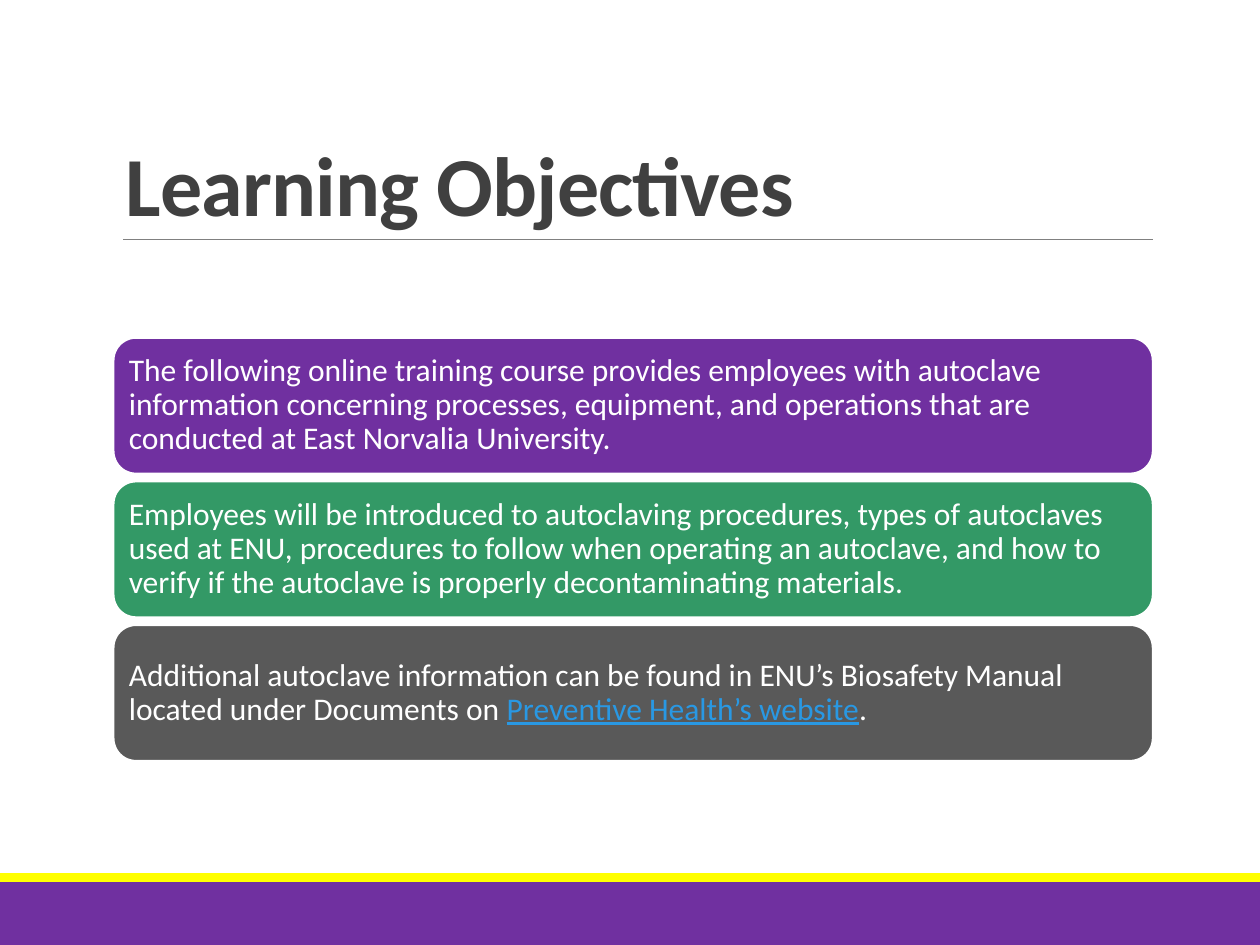
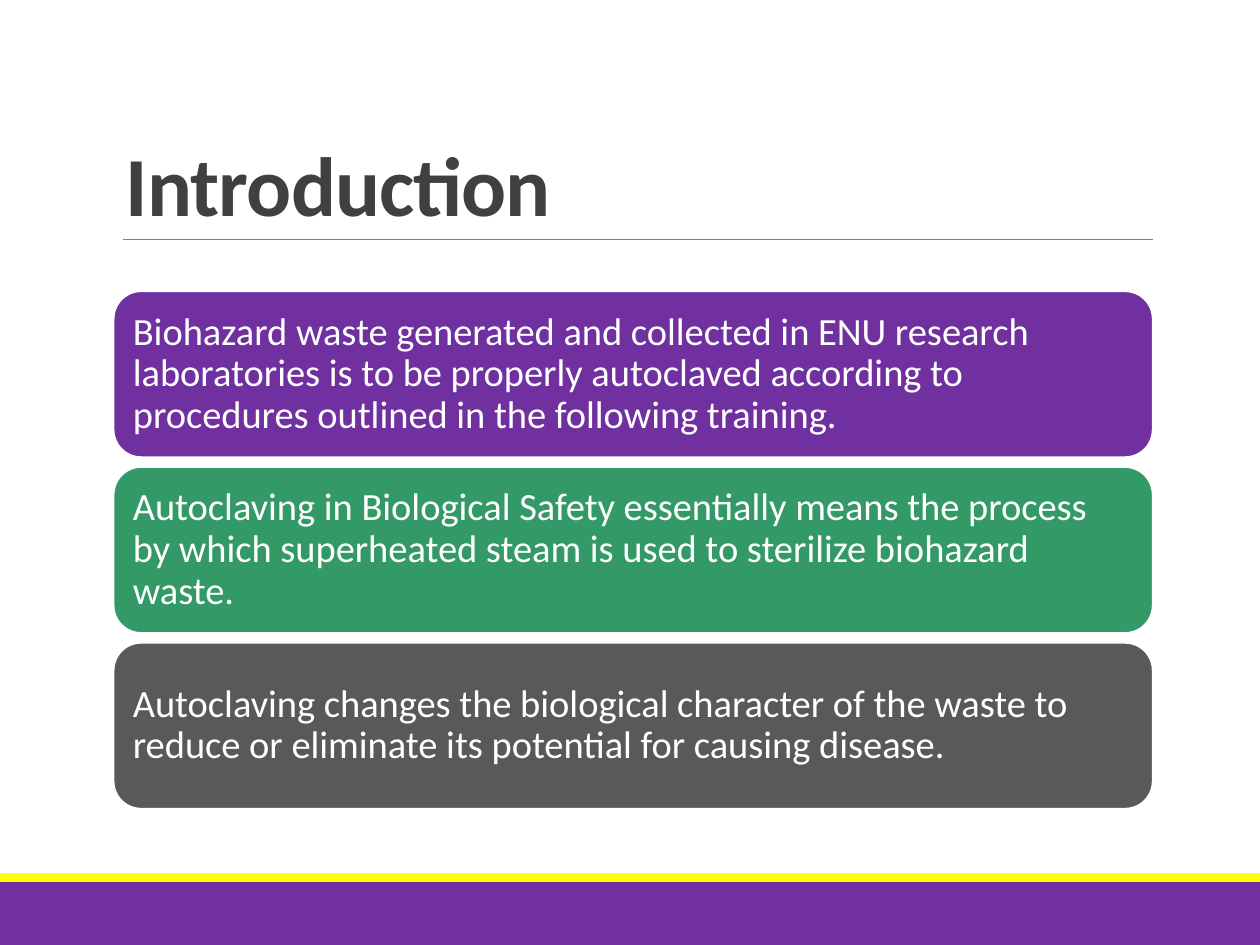
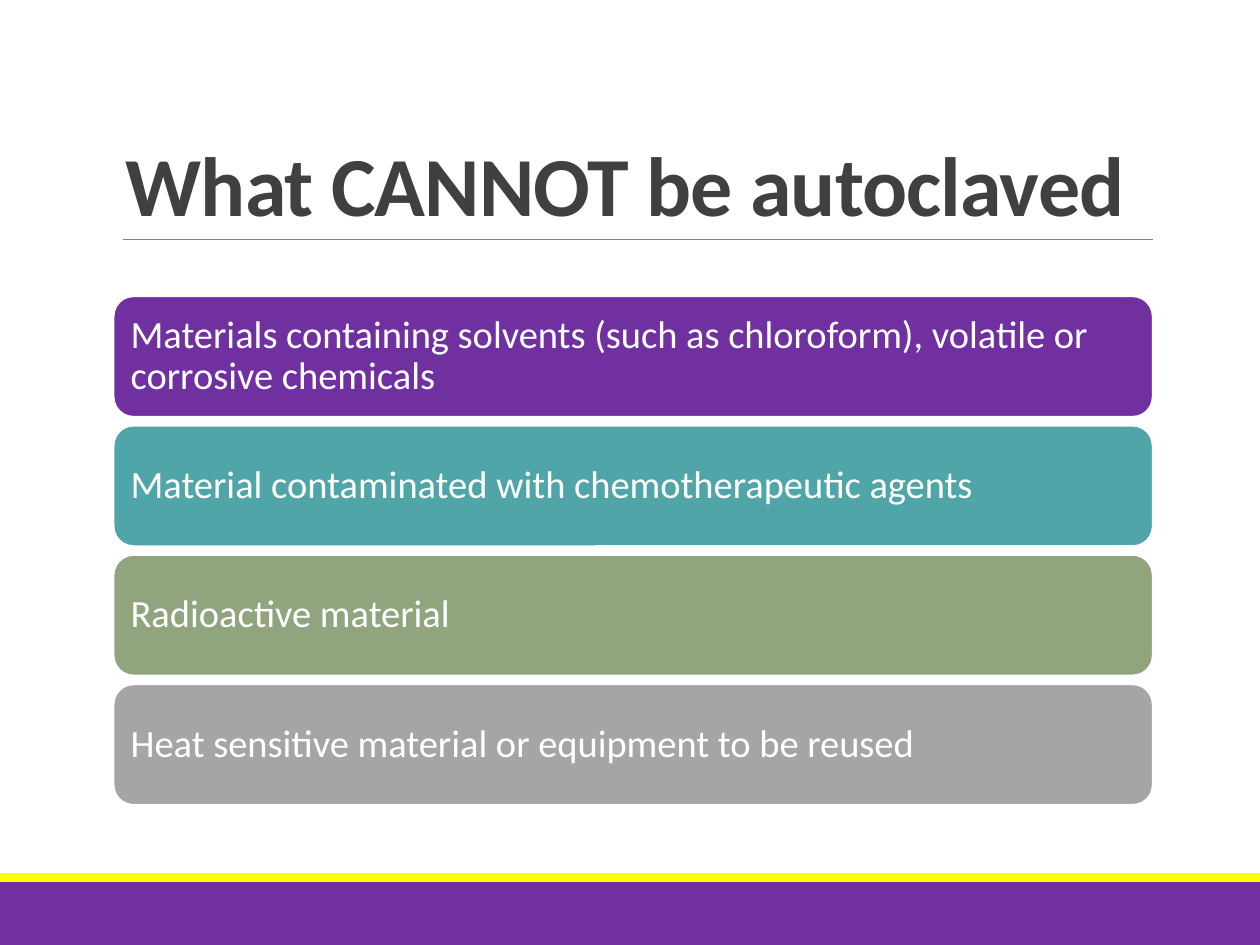
from dataclasses import dataclass

from lxml import etree
from pptx import Presentation
from pptx.dml.color import RGBColor
from pptx.enum.shapes import MSO_CONNECTOR, MSO_SHAPE
from pptx.enum.text import MSO_ANCHOR, PP_ALIGN
from pptx.oxml.ns import qn
from pptx.util import Inches, Pt

RECTANGLE = MSO_SHAPE.RECTANGLE
ROUNDED = MSO_SHAPE.ROUNDED_RECTANGLE
STRAIGHT = MSO_CONNECTOR.STRAIGHT
LEFT = PP_ALIGN.LEFT
MIDDLE, BOTTOM = MSO_ANCHOR.MIDDLE, MSO_ANCHOR.BOTTOM


@dataclass(frozen=True)
class Theme:
    font: str = "Calibri"
    white: str = "FFFFFF"
    purple: str = "7030A0"
    yellow: str = "FFFF00"
    green: str = "339966"
    charcoal: str = "595959"
    teal: str = "50A5A9"
    sage: str = "90A47D"
    silver: str = "A5A5A5"
    title: str = "404040"
    rule: str = "808080"
    link: str = "2998E3"
    title_size: int = 48
    card_size: int = 22
    small_card_size: int = 18


THEME = Theme()
PAGE_WIDTH, PAGE_HEIGHT = 10, 7.5
CONTENT_LEFT, CONTENT_WIDTH = 0.9, 8.25


def write_text(frame, text, *, size, color, bold=False, anchor=MIDDLE,
               line_spacing=0.9, inset=None, tracking=None, link=None):
    """Fill a frame with one paragraph; the phrase given as link is underlined."""
    frame.word_wrap = True
    frame.vertical_anchor = anchor
    if inset is not None:
        frame.margin_left = frame.margin_right = Inches(inset)
        frame.margin_top = frame.margin_bottom = Inches(inset)
    para = frame.paragraphs[0]
    para.alignment = LEFT
    para.line_spacing = line_spacing
    before, phrase, after = text.partition(link) if link else (text, "", "")
    for part in filter(None, (before, phrase, after)):
        span = para.add_run()
        span.text = part
        span.font.name = THEME.font
        span.font.size = Pt(size)
        span.font.bold = bold
        is_link = part == link
        span.font.underline = is_link
        span.font.color.rgb = RGBColor.from_string(THEME.link if is_link else color)
        if tracking is not None:
            span.font._element.set("spc", str(round(tracking * 100)))


class Deck:
    """Holds the presentation, its theme and the page being built."""

    def __init__(self, theme):
        self.theme = theme
        self.presentation = Presentation()
        self.presentation.slide_width = Inches(PAGE_WIDTH)
        self.presentation.slide_height = Inches(PAGE_HEIGHT)
        self.page = None

    def add_page(self, title):
        blank = self.presentation.slide_layouts[6]
        self.page = self.presentation.slides.add_slide(blank)
        # Footer bands and title rule
        self.shape(RECTANGLE, 0, 7, PAGE_WIDTH, 0.5, self.theme.purple)
        self.shape(RECTANGLE, 0, 6.93, PAGE_WIDTH, 0.07, self.theme.yellow)
        self.line(0.98, 1.9, CONTENT_LEFT + CONTENT_WIDTH, 1.9)
        self.title(title)

    def shape(self, kind, left, top, width, height, fill, outline=None):
        shape = self.page.shapes.add_shape(
            kind, Inches(left), Inches(top), Inches(width), Inches(height))
        shape.shadow.inherit = False
        shape.fill.solid()
        shape.fill.fore_color.rgb = RGBColor.from_string(fill)
        if outline:
            shape.line.color.rgb = RGBColor.from_string(outline)
            shape.line.width = Pt(1.25)
        else:
            shape.line.fill.background()
        return shape

    def line(self, x1, y1, x2, y2):
        line = self.page.shapes.add_connector(
            STRAIGHT, Inches(x1), Inches(y1), Inches(x2), Inches(y2))
        line.line.color.rgb = RGBColor.from_string(self.theme.rule)
        line.line.width = Pt(0.5)
        etree.SubElement(line._element.spPr, qn("a:effectLst"))

    def title(self, text):
        box = self.page.shapes.add_textbox(
            Inches(CONTENT_LEFT), Inches(0.31), Inches(CONTENT_WIDTH), Inches(1.59))
        write_text(box.text_frame, text, size=self.theme.title_size,
                   color=self.theme.title, bold=True, anchor=BOTTOM,
                   line_spacing=0.85, tracking=-0.5)

    def cards(self, items, *, first_top, last_top, height, size, inset, link=None):
        """Stack equally spaced cards from (text, fill) pairs."""
        step = (last_top - first_top) / (len(items) - 1)
        for index, (text, fill) in enumerate(items):
            card = self.shape(ROUNDED, CONTENT_LEFT, first_top + index * step,
                              CONTENT_WIDTH, height, fill, self.theme.white)
            write_text(card.text_frame, text, size=size, color=self.theme.white,
                       inset=inset, link=link)


def main():
    deck = Deck(THEME)

    # Learning objectives
    deck.add_page("Learning Objectives")
    deck.cards([
        ("The following online training course provides employees with autoclave "
         "information concerning processes, equipment, and operations that are "
         "conducted at East Norvalia University.", THEME.purple),
        ("Employees will be introduced to autoclaving procedures, types of autoclaves "
         "used at ENU, procedures to follow when operating an autoclave, and how to "
         "verify if the autoclave is properly decontaminating materials.", THEME.green),
        ("Additional autoclave information can be found in ENU’s Biosafety Manual "
         "located under Documents on Preventive Health’s website.", THEME.charcoal),
    ], first_top=2.68, last_top=4.96, height=1.08, size=THEME.small_card_size,
        inset=0.07, link="Preventive Health’s website")

    # Introduction
    deck.add_page("Introduction")
    deck.cards([
        ("Biohazard waste generated and collected in ENU research laboratories is to "
         "be properly autoclaved according to procedures outlined in the following "
         "training.", THEME.purple),
        ("Autoclaving in Biological Safety essentially means the process by which "
         "superheated steam is used to sterilize biohazard waste.", THEME.green),
        ("Autoclaving changes the biological character of the waste to reduce or "
         "eliminate its potential for causing disease.", THEME.charcoal),
    ], first_top=2.31, last_top=5.1, height=1.32, size=THEME.card_size, inset=0.09)

    # Excluded materials
    deck.add_page("What CANNOT be autoclaved")
    deck.cards([
        ("Materials containing solvents (such as chloroform), volatile or corrosive "
         "chemicals", THEME.purple),
        ("Material contaminated with chemotherapeutic agents", THEME.teal),
        ("Radioactive material", THEME.sage),
        ("Heat sensitive material or equipment to be reused", THEME.silver),
    ], first_top=2.35, last_top=5.43, height=0.96, size=THEME.card_size, inset=0.09)

    deck.presentation.save("out.pptx")


if __name__ == "__main__":
    main()
